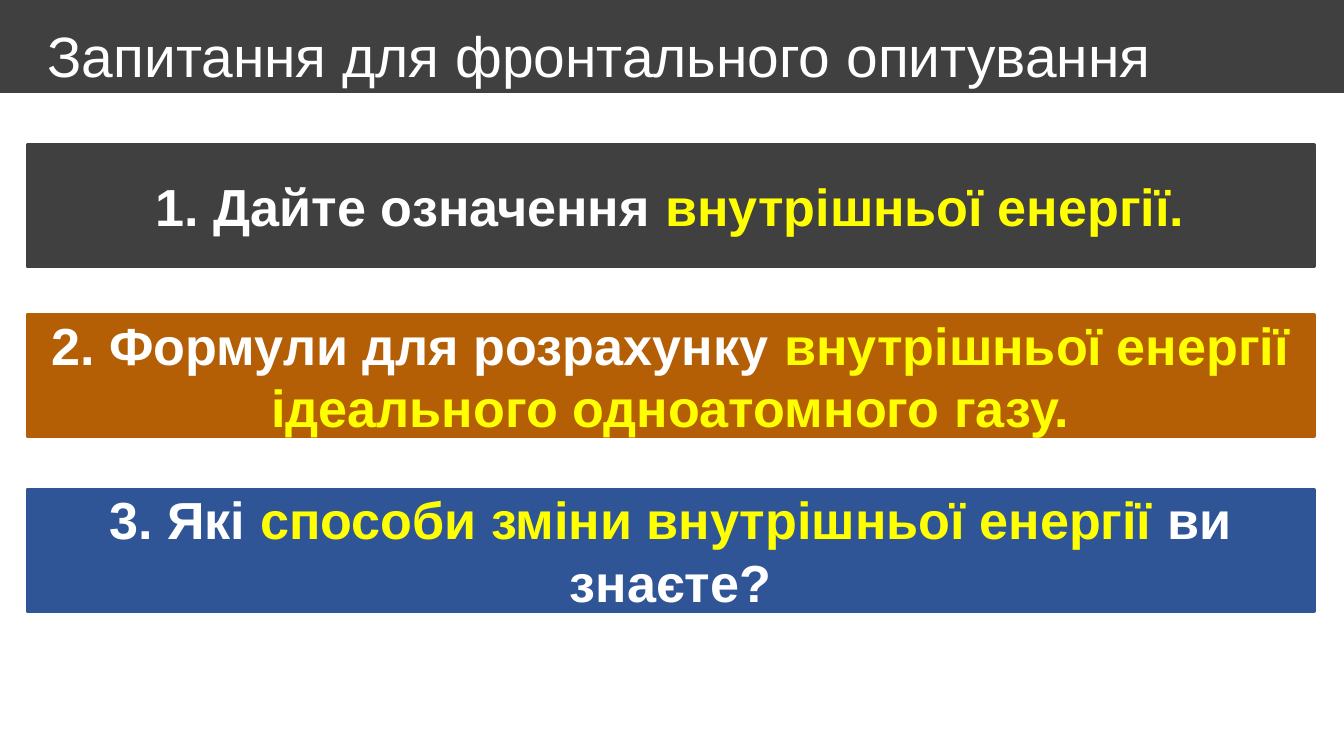
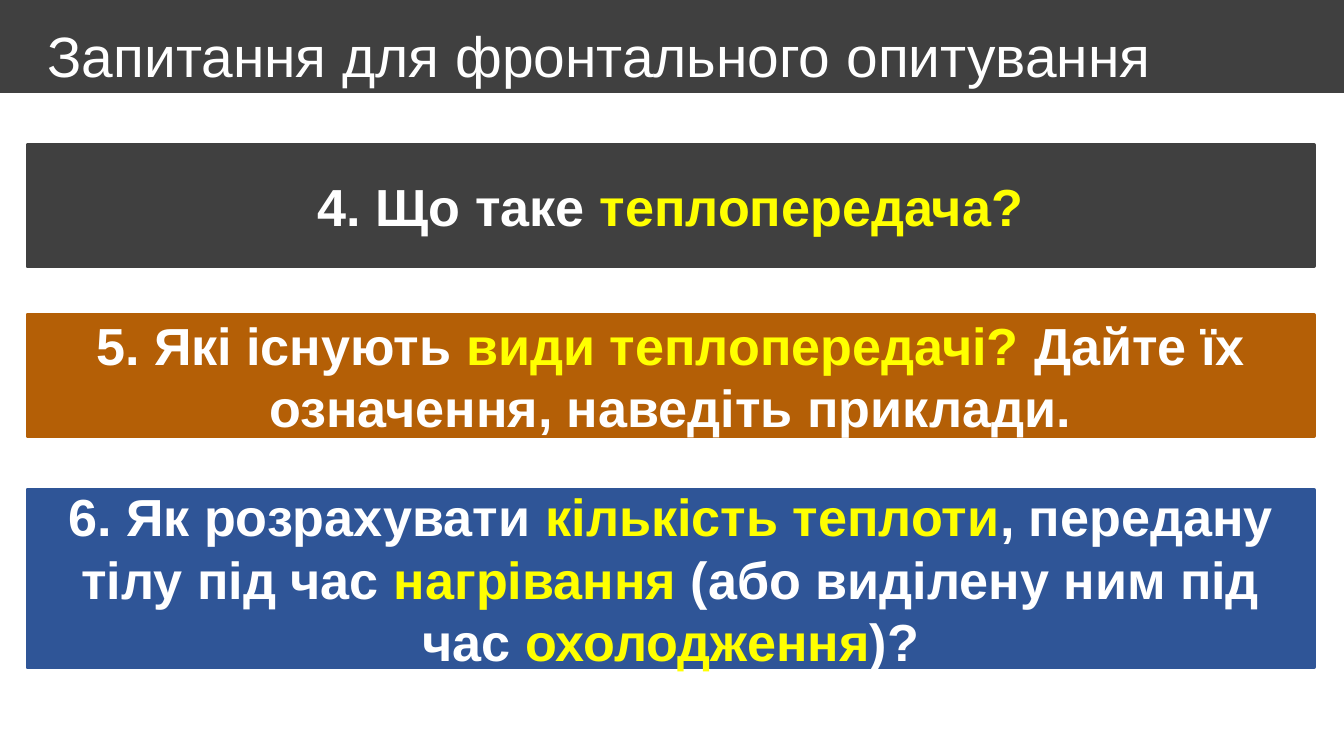
from pptx import Presentation
from pptx.dml.color import RGBColor
from pptx.enum.shapes import MSO_SHAPE
from pptx.enum.text import MSO_ANCHOR, PP_ALIGN
from pptx.util import Inches, Pt

RECTANGLE = MSO_SHAPE.RECTANGLE
MIDDLE = MSO_ANCHOR.MIDDLE
LEFT, CENTER = PP_ALIGN.LEFT, PP_ALIGN.CENTER

WHITE = RGBColor(0xFF, 0xFF, 0xFF)
YELLOW = RGBColor(0xFF, 0xFF, 0x00)
GRAY = RGBColor(0x40, 0x40, 0x40)
ORANGE = RGBColor(0xB4, 0x5F, 0x06)
BLUE = RGBColor(0x2F, 0x55, 0x97)

FONT = "Arial"
TITLE = "Запитання для фронтального опитування"

# Page grid, in inches
PAGE_WIDTH, PAGE_HEIGHT = 15.75, 8.86
BAND_HEIGHT = 1.08
TITLE_LEFT, TITLE_TOP, TITLE_WIDTH = 0.46, 0.3, 13.58
BOX_LEFT, BOX_WIDTH = 0.32, 15.08
ROWS = [(1.7, GRAY), (3.69, ORANGE), (5.74, BLUE)]
LOW, TALL = 1.42, 2.08

# Each question: box height, then runs that alternate plain and highlighted
PAGES = [
    [
        (LOW, ["1. Дайте означення ", "внутрішньої енергії."]),
        (LOW, ["2. Формули для розрахунку ",
               "внутрішньої енергії ідеального одноатомного газу."]),
        (LOW, ["3. Які ", "способи зміни внутрішньої енергії ", "ви знаєте?"]),
    ],
    [
        (LOW, ["4. Що таке ", "теплопередача?"]),
        (LOW, ["5. Які існують ", "види теплопередачі? ",
               "Дайте їх означення, наведіть приклади."]),
        (TALL, ["6. Як розрахувати ", "кількість теплоти",
                ", передану тілу під час ", "нагрівання",
                " (або виділену ним під час ", "охолодження", ")?"]),
    ],
]


def add_bar(page, left, top, width, height, color, line_width):
    bar = page.shapes.add_shape(
        RECTANGLE, Inches(left), Inches(top), Inches(width), Inches(height))
    bar.shadow.inherit = False
    bar.fill.solid()
    bar.fill.fore_color.rgb = color
    bar.line.color.rgb = color
    bar.line.width = Pt(line_width)
    return bar


def write(box, texts, size, bold, align):
    frame = box.text_frame
    frame.word_wrap = True
    frame.vertical_anchor = MIDDLE
    para = frame.paragraphs[0]
    para.alignment = align
    for index, text in enumerate(texts):
        span = para.add_run()
        span.text = text
        span.font.name = FONT
        span.font.size = Pt(size)
        span.font.bold = bold
        span.font.color.rgb = YELLOW if index % 2 else WHITE
    return para


deck = Presentation()
deck.slide_width = Inches(PAGE_WIDTH)
deck.slide_height = Inches(PAGE_HEIGHT)
blank = deck.slide_layouts[6]

for questions in PAGES:
    page = deck.slides.add_slide(blank)

    # Title band
    add_bar(page, 0, 0, PAGE_WIDTH, BAND_HEIGHT, GRAY, 1)
    title = page.shapes.add_textbox(
        Inches(TITLE_LEFT), Inches(TITLE_TOP),
        Inches(TITLE_WIDTH), Inches(BAND_HEIGHT - TITLE_TOP))
    write(title, [TITLE], 48, False, LEFT).line_spacing = 0.9

    # Question boxes
    for (top, color), (height, texts) in zip(ROWS, questions):
        box = add_bar(page, BOX_LEFT, top, BOX_WIDTH, height, color, 3)
        write(box, texts, 44, True, CENTER)

deck.save("out.pptx")
